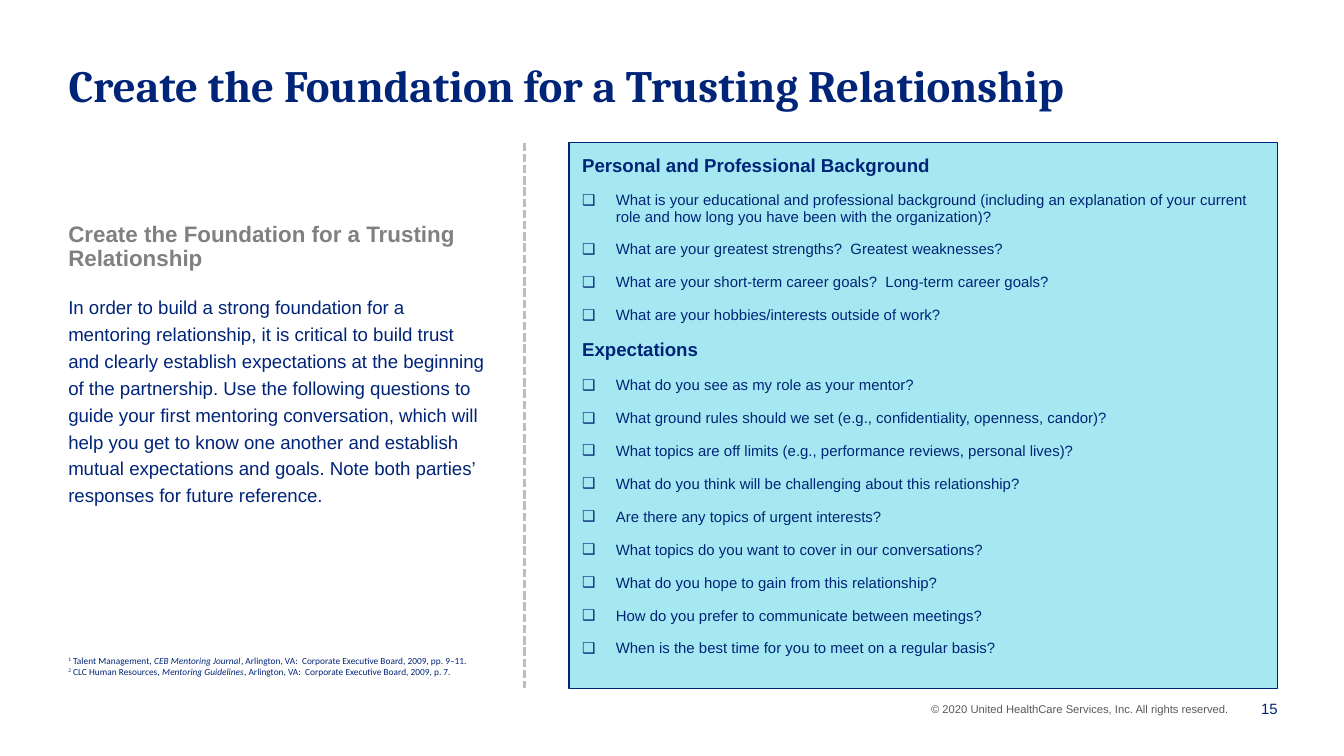
from dataclasses import dataclass

from lxml.etree import SubElement
from pptx import Presentation
from pptx.dml.color import RGBColor
from pptx.enum.dml import MSO_LINE
from pptx.enum.shapes import MSO_CONNECTOR
from pptx.enum.text import MSO_ANCHOR, MSO_AUTO_SIZE as AutoSize, PP_ALIGN
from pptx.oxml.ns import qn
from pptx.util import Inches, Pt

WIDTH = Inches(10)
HEIGHT = WIDTH * 9 // 16
LEFT = 4.1  # percent of the slide width
BODY_TOP, BODY_HEIGHT = 18.86, 72.18  # percent of the slide height


@dataclass(frozen=True)
class Theme:
    navy: str = "002477"
    gray: str = "808080"
    footer_gray: str = "595959"
    divider: str = "BDBDBD"
    panel: str = "A5E8F1"
    sans: str = "Arial"
    serif: str = "Cambria"
    note_font: str = "Calibri"
    title_size: int = 24
    heading_size: int = 12
    body_size: int = 10
    item_size: int = 8
    footer_size: int = 6
    note_size: int = 5


THEME = Theme()
TITLE = "Create the Foundation for a Trusting Relationship"
INTRO = (
    "In order to build a strong foundation for a mentoring relationship, it is "
    "critical to build trust and clearly establish expectations at the beginning "
    "of the partnership. Use the following questions to guide your first mentoring "
    "conversation, which will help you get to know one another and establish mutual "
    "expectations and goals. Note both parties’ responses for future reference."
)
QUESTIONS = {
    "Personal and Professional Background": [
        "What is your educational and professional background (including an "
        "explanation of your current role and how long you have been with the "
        "organization)?",
        "What are your greatest strengths?  Greatest weaknesses?",
        "What are your short-term career goals?  Long-term career goals?",
        "What are your hobbies/interests outside of work?",
    ],
    "Expectations": [
        "What do you see as my role as your mentor?",
        "What ground rules should we set (e.g., confidentiality, openness, candor)?",
        "What topics are off limits (e.g., performance reviews, personal lives)?",
        "What do you think will be challenging about this relationship?",
        "Are there any topics of urgent interests?",
        "What topics do you want to cover in our conversations?",
        "What do you hope to gain from this relationship?",
        "How do you prefer to communicate between meetings?",
        "When is the best time for you to meet on a regular basis?",
    ],
}
SOURCES = [
    ("1", " Talent Management, ", "CEB Mentoring Journal",
     ", Arlington, VA:  Corporate Executive Board, 2009, pp. 9–11."),
    ("2", " CLC Human Resources, ", "Mentoring Guidelines",
     ", Arlington, VA:  Corporate Executive Board, 2009, p. 7."),
]


def area(left, top, width, height):
    """Turn percentages of the slide into left, top, width and height."""
    return (int(WIDTH * left / 100), int(HEIGHT * top / 100),
            int(WIDTH * width / 100), int(HEIGHT * height / 100))


def style(para, size, color=THEME.navy, font=THEME.sans, bold=False):
    para.font.size = Pt(size)
    para.font.name = font
    para.font.bold = bold
    para.font.color.rgb = RGBColor.from_string(color)


def next_para(frame):
    """Return the empty first paragraph, or a new one after the others."""
    first = frame.paragraphs[0]
    return frame.add_paragraph() if first.runs else first


def add_para(frame, text, line_spacing=None, before=0, after=0):
    para = next_para(frame)
    para.text = text
    if len(frame.paragraphs) > 1:
        para.space_before = Pt(before)
    para.space_after = Pt(after)
    if line_spacing:
        para.line_spacing = line_spacing
    return para


def add_checkbox(para):
    properties = para._p.get_or_add_pPr()
    properties.set("marL", str(Inches(0.25)))
    properties.set("indent", str(-Inches(0.25)))
    color = SubElement(properties, qn("a:buClr"))
    SubElement(color, qn("a:srgbClr"), val=THEME.navy)
    SubElement(properties, qn("a:buFont"), typeface=THEME.sans)
    SubElement(properties, qn("a:buChar"), char="❑")


def add_text_box(page, place, inset=0.05, fit=AutoSize.SHAPE_TO_FIT_TEXT):
    box = page.shapes.add_textbox(*place)
    frame = box.text_frame
    frame.word_wrap = True
    frame.auto_size = fit
    frame.margin_top = frame.margin_bottom = Inches(inset)
    return box


def set_title(page):
    title = page.shapes.title
    title.left, title.top, title.width, title.height = area(LEFT, 6.8, 91, 10.67)
    frame = title.text_frame
    frame.auto_size = AutoSize.NONE
    frame.vertical_anchor = MSO_ANCHOR.TOP
    para = add_para(frame, TITLE)
    para.alignment = PP_ALIGN.LEFT
    style(para, THEME.title_size, font=THEME.serif, bold=True)


def add_intro(page):
    frame = add_text_box(page, area(LEFT, 29.45, 33.3, 37.87), inset=0).text_frame
    heading = add_para(frame, TITLE, 0.9, after=6)
    style(heading, THEME.heading_size, THEME.gray, bold=True)
    style(add_para(frame, INTRO, 1.2, before=5, after=6), THEME.body_size)


def add_question_panel(page):
    panel = add_text_box(page, area(42.34, BODY_TOP, 52.7, BODY_HEIGHT), inset=0.1)
    panel.fill.solid()
    panel.fill.fore_color.rgb = RGBColor.from_string(THEME.panel)
    panel.line.color.rgb = RGBColor.from_string(THEME.navy)
    panel.line.width = Pt(0.75)
    frame = panel.text_frame
    for heading, questions in QUESTIONS.items():
        para = add_para(frame, heading, 0.9, before=3, after=6)
        style(para, THEME.body_size, bold=True)
        for question in questions:
            para = add_para(frame, question, 0.9, before=3, after=6)
            add_checkbox(para)
            style(para, THEME.item_size)


def add_sources(page):
    frame = add_text_box(page, area(LEFT, 86.65, 43.2, 3.02), inset=0).text_frame
    for parts in SOURCES:
        para = next_para(frame)
        style(para, THEME.note_size, font=THEME.note_font)
        for part in parts:
            para.add_run().text = part
        number, _, journal, _ = para.runs
        number.font._element.set("baseline", "30000")
        journal.font.italic = True


def add_divider(page):
    left, top, _, height = area(39, BODY_TOP, 0, BODY_HEIGHT)
    divider = page.shapes.add_connector(
        MSO_CONNECTOR.STRAIGHT, left, top, left, top + height)
    divider.line.color.rgb = RGBColor.from_string(THEME.divider)
    divider.line.width = Pt(1.5)
    divider.line.dash_style = MSO_LINE.SQUARE_DOT
    SubElement(divider._element.spPr, qn("a:effectLst"))


def add_footer(page):
    frame = add_text_box(page, area(68.3, 92.09, 25.8, 3.56)).text_frame
    notice = "© 2020 United HealthCare Services, Inc. All rights reserved."
    style(add_para(frame, notice), THEME.footer_size, THEME.footer_gray)
    place = area(92.15, 91.02, 3.9, 5.51)
    frame = add_text_box(page, place, fit=AutoSize.NONE).text_frame
    frame.vertical_anchor = MSO_ANCHOR.MIDDLE
    number = add_para(frame, "15")
    number.alignment = PP_ALIGN.RIGHT
    style(number, THEME.item_size)


def main():
    deck = Presentation()
    deck.slide_width, deck.slide_height = WIDTH, HEIGHT
    page = deck.slides.add_slide(deck.slide_layouts.get_by_name("Title Only"))
    for add_part in (set_title, add_intro, add_question_panel,
                     add_sources, add_divider, add_footer):
        add_part(page)
    deck.save("out.pptx")


if __name__ == "__main__":
    main()
